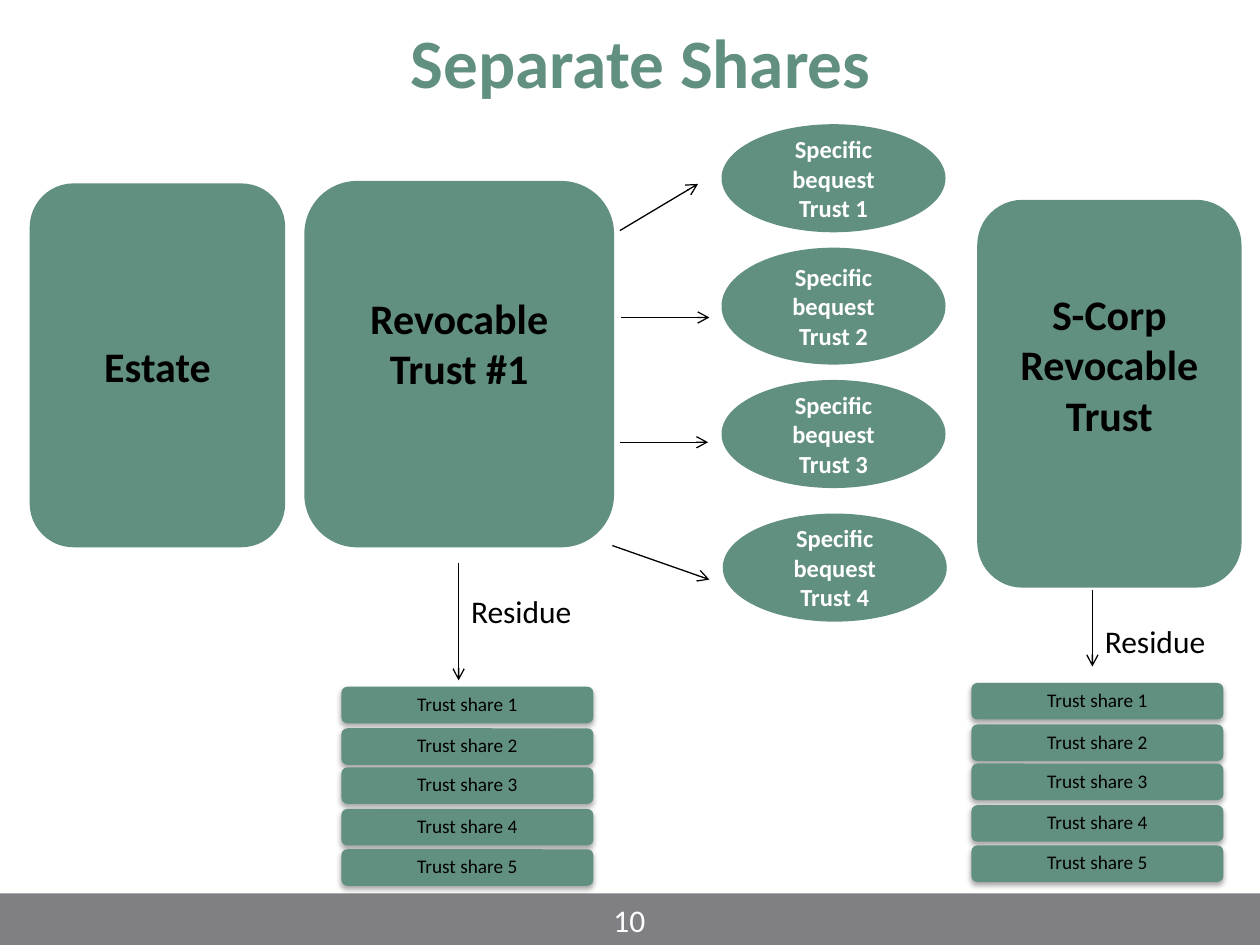
from lxml.etree import SubElement
from pptx import Presentation
from pptx.dml.color import RGBColor
from pptx.enum.shapes import MSO_CONNECTOR, MSO_SHAPE
from pptx.enum.text import MSO_ANCHOR, PP_ALIGN
from pptx.oxml import parse_xml
from pptx.oxml.ns import nsdecls, qn
from pptx.util import Inches, Pt

COLORS = {"green": "629080", "gray": "807F83", "black": "000000", "white": "FFFFFF"}
FONT = "Calibri"

ENTITIES = [
    ("Estate", (0.25, 1.47, 2, 2.86), 0.05),
    ("Revocable Trust #1", (2.43, 1.45, 2.43, 2.88), 0.39),
    ("S-Corp Revocable Trust", (7.77, 1.6, 2.07, 3.05), 0.52),
]
BEQUESTS = [(5.74, 1, 0.83), (5.74, 1.98, 0.9), (5.74, 3.03, 0.83), (5.75, 4.09, 0.83)]
ARROWS = [
    (4.92, 1.83, 5.54, 1.46),
    (4.93, 2.52, 5.63, 2.52),
    (4.92, 3.51, 5.62, 3.51),
    (4.86, 4.33, 5.63, 4.6),
    (3.64, 4.47, 3.64, 5.4),
    (8.67, 4.68, 8.67, 5.29),
]
RESIDUES = [(3.64, 4.65, 1.44, 0.4), (8.67, 4.89, 1.17, 0.4)]
SHARE_STACKS = [(2.71, 5.45), (7.71, 5.42)]
SHARE_OFFSETS = [0, 0.33, 0.64, 0.97, 1.29]

SHADOW = (
    f'<a:outerShdw {nsdecls("a")} blurRad="{Pt(3.1)}" dist="{Pt(1.8)}" dir="5400000" '
    'rotWithShape="0"><a:srgbClr val="000000"><a:alpha val="35000"/></a:srgbClr></a:outerShdw>'
)


def rgb(name):
    return RGBColor.from_string(COLORS[name])


def write(sp, text, size, color, bold=False, align=PP_ALIGN.CENTER, anchor=MSO_ANCHOR.MIDDLE):
    tf = sp.text_frame
    tf.word_wrap = True
    tf.vertical_anchor = anchor
    p = tf.paragraphs[0]
    p.text = text
    p.alignment = align
    p.font.name, p.font.size, p.font.bold = FONT, Pt(size), bold
    p.font.color.rgb = rgb(color)
    return tf


def add_shape(slide, kind, box, fill="green", outlined=False):
    sp = slide.shapes.add_shape(kind, *map(Inches, box))
    sp.shadow.inherit = False
    sp.fill.solid()
    sp.fill.fore_color.rgb = rgb(fill)
    if outlined:
        sp.line.color.rgb = rgb(fill)
        sp.line.width = Pt(2)
    else:
        sp.line.fill.background()
    return sp


def add_label(slide, box, *args, **kwargs):
    return write(slide.shapes.add_textbox(*map(Inches, box)), *args, **kwargs)


def add_arrow(slide, ends):
    line = slide.shapes.add_connector(MSO_CONNECTOR.STRAIGHT, *map(Inches, ends))
    line.line.color.rgb = rgb("black")
    line.line.width = Pt(0.75)
    SubElement(line.line._get_or_add_ln(), qn("a:tailEnd"), type="arrow")
    SubElement(line._element.spPr, qn("a:effectLst"))


def add_share(slide, box, text):
    sp = add_shape(slide, MSO_SHAPE.ROUNDED_RECTANGLE, box)
    sp._element.spPr.find(qn("a:effectLst")).append(parse_xml(SHADOW))
    tf = write(sp, text, 11, "black")
    tf.margin_left = tf.margin_right = tf.margin_top = tf.margin_bottom = Inches(0.05)
    tf.paragraphs[0].line_spacing = 0.9


def main():
    prs = Presentation()
    prs.slide_width, prs.slide_height = Inches(10), Inches(7.5)
    s = prs.slides.add_slide(prs.slide_layouts[6])

    add_shape(s, MSO_SHAPE.RECTANGLE, (0, 7.09, 10, 0.41), "gray")
    add_label(s, (0.64, 0.17, 8.89, 0.62), "Separate Shares", 39.6, "green", bold=True)

    for name, box, bottom in ENTITIES:
        sp = add_shape(s, MSO_SHAPE.ROUNDED_RECTANGLE, box, outlined=True)
        write(sp, name, 24, "black", bold=True).margin_bottom = Inches(bottom)

    for n, (left, top, height) in enumerate(BEQUESTS, 1):
        sp = add_shape(s, MSO_SHAPE.OVAL, (left, top, 1.75, height), outlined=True)
        write(sp, f"Specific bequest Trust {n}", 14, "white", bold=True)

    for ends in ARROWS:
        add_arrow(s, ends)

    for box in RESIDUES:
        add_label(s, box, "Residue", 18, "black", align=PP_ALIGN.LEFT, anchor=MSO_ANCHOR.TOP)

    for left, top in SHARE_STACKS:
        for n, offset in enumerate(SHARE_OFFSETS, 1):
            add_share(s, (left, top + offset, 2, 0.29), f"Trust share {n}")

    add_label(s, (3.83, 7.1, 2.33, 0.4), "10", 18, "white", anchor=MSO_ANCHOR.TOP)
    prs.save("out.pptx")


if __name__ == "__main__":
    main()
